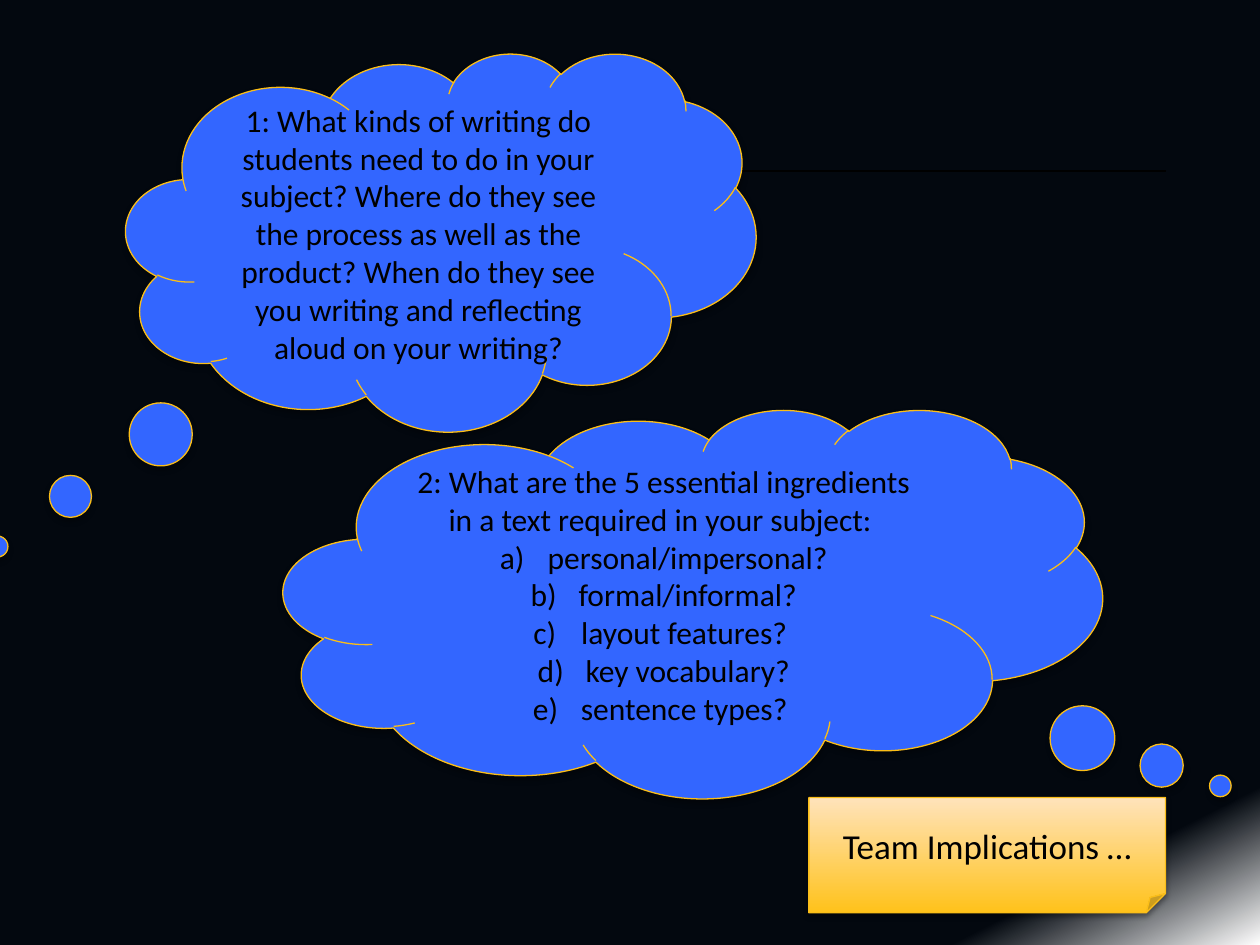
from copy import deepcopy

from lxml import etree
from pptx import Presentation
from pptx.dml.color import RGBColor
from pptx.enum.shapes import MSO_CONNECTOR, MSO_SHAPE
from pptx.enum.text import MSO_ANCHOR, PP_ALIGN
from pptx.oxml.ns import qn
from pptx.util import Inches, Pt

CLOUD = MSO_SHAPE.CLOUD_CALLOUT
NOTE = MSO_SHAPE.FOLDED_CORNER
STRAIGHT = MSO_CONNECTOR.STRAIGHT
MIDDLE = MSO_ANCHOR.MIDDLE
CENTER = PP_ALIGN.CENTER

BLACK = RGBColor(0x00, 0x00, 0x00)
WHITE = RGBColor(0xFF, 0xFF, 0xFF)
NIGHT = RGBColor(0x03, 0x08, 0x0F)
BLUE = RGBColor(0x33, 0x66, 0xFF)
GOLD = RGBColor(0xFB, 0xBE, 0x18)
AMBER = RGBColor(0xFF, 0xC2, 0x1A)
CREAM = RGBColor(0xFF, 0xE3, 0xBB)

WIDTH, HEIGHT = Inches(10), Inches(7.5)
LINE_WIDTH = Pt(0.75)
LIST_INDENT = Inches(0.38)

QUESTION_1 = (
    "1: What kinds of writing do students need to do in your subject? "
    "Where do they see the process as well as the product? "
    "When do they see you writing and reflecting aloud on your writing?"
)
QUESTION_2 = "2: What are the 5 essential ingredients in a text required in your subject: "
INGREDIENTS = [
    "personal/impersonal?",
    "formal/informal?",
    "layout features? ",
    "key vocabulary?",
    "sentence types? ",
]


def share_x(share):
    return round(WIDTH * share)


def share_y(share):
    return round(HEIGHT * share)


def paint_gradient(fill, element, stops, clockwise_angle):
    """Fill with (position, colour) stops; element is the XML that holds the fill."""
    fill.gradient()
    fill.gradient_angle = 360 - clockwise_angle
    stop_list = next(element.iter(qn("a:gsLst")))
    for _ in stops[2:]:
        stop_list.append(deepcopy(stop_list[-1]))
    for stop, (position, color) in zip(fill.gradient_stops, stops):
        stop.position = position
        stop.color.rgb = color


def add_soft_shadow(shape):
    shape.shadow.inherit = False
    effects = shape.element.spPr.find(qn("a:effectLst"))
    settings = {"blurRad": Pt(3.1), "dist": Pt(1.8), "dir": 90 * 60000, "rotWithShape": 0}
    shadow = etree.SubElement(effects, qn("a:outerShdw"))
    for name, value in settings.items():
        shadow.set(name, str(int(value)))
    color = etree.SubElement(shadow, qn("a:srgbClr"), val=str(BLACK))
    etree.SubElement(color, qn("a:alpha"), val="35000")


def add_panel(slide, kind, box, text, size):
    """Add an outlined shape; box is left, top, width, height as slide shares."""
    left, top, width, height = box
    shape = slide.shapes.add_shape(
        kind, share_x(left), share_y(top), share_x(width), share_y(height)
    )
    shape.line.color.rgb = GOLD
    shape.line.width = LINE_WIDTH
    add_soft_shadow(shape)
    shape.text_frame.word_wrap = True
    shape.text_frame.vertical_anchor = MIDDLE
    write_paragraph(shape.text_frame.paragraphs[0], text, size)
    return shape


def write_paragraph(paragraph, text, size):
    paragraph.alignment = CENTER
    font = paragraph.add_run().font
    for name, value in {"name": "Calibri", "size": Pt(size)}.items():
        setattr(font, name, value)
    font.color.rgb = BLACK
    paragraph.runs[0].text = text


def add_lettered_list(text_frame, items, size):
    for item in items:
        paragraph = text_frame.add_paragraph()
        write_paragraph(paragraph, item, size)
        properties = paragraph._p.get_or_add_pPr()
        properties.set("marL", str(LIST_INDENT))
        properties.set("indent", str(-LIST_INDENT))
        etree.SubElement(properties, qn("a:buAutoNum"), type="alphaLcParenR")


def add_thought(slide, box, tail, text):
    cloud = add_panel(slide, CLOUD, box, text, 18)
    cloud.fill.solid()
    cloud.fill.fore_color.rgb = BLUE
    for index, offset in enumerate(tail):
        cloud.adjustments[index] = offset
    return cloud


def add_title_rule(slide):
    y = share_y(0.181)
    rule = slide.shapes.add_connector(STRAIGHT, share_x(0.183), y, share_x(0.925), y)
    rule.line.color.rgb = BLACK
    rule.line.width = LINE_WIDTH
    etree.SubElement(rule.element.spPr, qn("a:effectLst"))


def main():
    presentation = Presentation()
    presentation.slide_width, presentation.slide_height = WIDTH, HEIGHT
    slide = presentation.slides.add_slide(presentation.slide_layouts[6])
    paint_gradient(
        slide.background.fill, slide.element, [(0, NIGHT), (0.9, NIGHT), (1, WHITE)], 63
    )

    add_title_rule(slide)
    add_thought(slide, (0.1, 0.056, 0.5, 0.4), (-0.704, 0.806), QUESTION_1)
    ingredients = add_thought(
        slide, (0.225, 0.433, 0.65, 0.411), (0.644, 0.47), QUESTION_2
    )
    add_lettered_list(ingredients.text_frame, INGREDIENTS, 18)

    note = add_panel(
        slide, NOTE, (0.642, 0.844, 0.283, 0.122), "Team Implications …", 20
    )
    paint_gradient(note.fill, note.element, [(0, AMBER), (1, CREAM)], 270)
    presentation.save("out.pptx")


if __name__ == "__main__":
    main()
